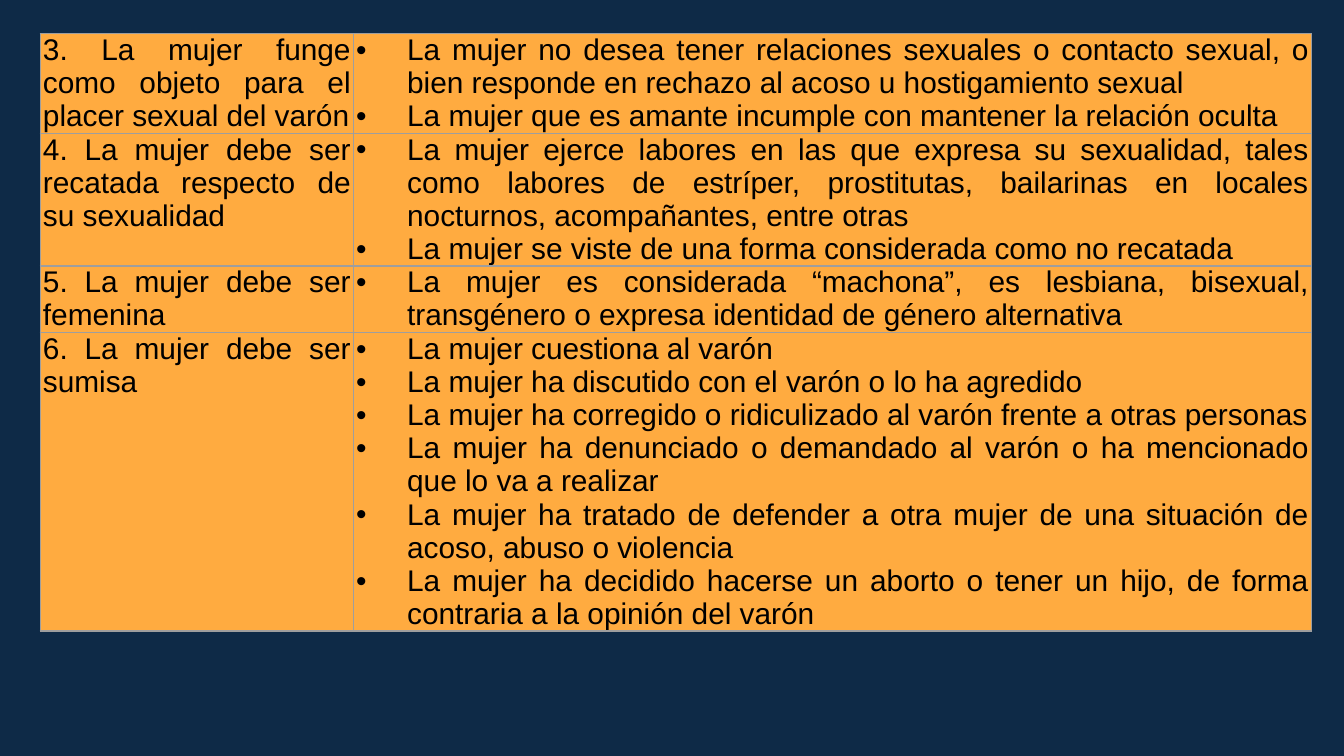
from lxml.etree import SubElement
from pptx import Presentation
from pptx.dml.color import RGBColor
from pptx.enum.text import PP_ALIGN
from pptx.oxml.ns import qn
from pptx.util import Inches, Pt

COLOURS = {"background": "0E2A47", "cell": "FFAB40", "text": "000000", "border": "9E9E9E"}

# Each row: height, stereotype, behaviours that break it
ROWS = [
    (0.5, "3. La mujer funge como objeto para el placer sexual del varón", [
        "La mujer no desea tener relaciones sexuales o contacto sexual, o bien responde "
        "en rechazo al acoso u hostigamiento sexual",
        "La mujer que es amante incumple con mantener la relación oculta",
    ]),
    (0.58, "4. La mujer debe ser recatada respecto de su sexualidad", [
        "La mujer ejerce labores en las que expresa su sexualidad, tales como labores de "
        "estríper, prostitutas, bailarinas en locales nocturnos, acompañantes, entre otras",
        "La mujer se viste de una forma considerada como no recatada",
    ]),
    (0.33, "5. La mujer debe ser femenina", [
        "La mujer es considerada “machona”, es lesbiana, bisexual, transgénero o expresa "
        "identidad de género alternativa",
    ]),
    (1.17, "6. La mujer debe ser sumisa", [
        "La mujer cuestiona al varón",
        "La mujer ha discutido con el varón o lo ha agredido",
        "La mujer ha corregido o ridiculizado al varón frente a otras personas",
        "La mujer ha denunciado o demandado al varón o ha mencionado que lo va a realizar",
        "La mujer ha tratado de defender a otra mujer de una situación de acoso, abuso o violencia",
        "La mujer ha decidido hacerse un aborto o tener un hijo, de forma contraria a la "
        "opinión del varón",
    ]),
]


class SlideBuilder:
    font = "Arial"
    size = Pt(16)
    indent = Inches(0.38)
    margin = Inches(0.02)

    def __init__(self, slide):
        self.slide = slide

    def colour(self, name):
        return RGBColor.from_string(COLOURS[name])

    def background(self):
        fill = self.slide.background.fill
        fill.solid()
        fill.fore_color.rgb = self.colour("background")

    def table(self, left, top, width, height, columns, rows):
        frame = self.slide.shapes.add_table(
            len(rows), len(columns), Inches(left), Inches(top), Inches(width), Inches(height))
        table = frame.table
        table.first_row = table.horz_banding = False
        for column, column_width in zip(table.columns, columns):
            column.width = Inches(column_width)
        for index, (row_height, stereotype, behaviours) in enumerate(rows):
            table.rows[index].height = Inches(row_height)
            self.cell(table.cell(index, 0), [stereotype])
            self.cell(table.cell(index, 1), behaviours, bulleted=True)
        frame.height = Inches(height)

    def cell(self, cell, texts, bulleted=False):
        cell.margin_left = cell.margin_right = self.margin
        cell.margin_top = cell.margin_bottom = 0
        self.borders(cell)
        cell.fill.solid()
        cell.fill.fore_color.rgb = self.colour("cell")
        frame = cell.text_frame
        for index, text in enumerate(texts):
            paragraph = frame.add_paragraph() if index else frame.paragraphs[0]
            paragraph.alignment = PP_ALIGN.JUSTIFY
            if bulleted:
                if index == len(texts) - 1:
                    paragraph.space_after = Pt(8)
                self.bullet(paragraph)
            run = paragraph.add_run()
            run.text = text
            run.font.name = self.font
            run.font.size = self.size
            run.font.color.rgb = self.colour("text")

    def bullet(self, paragraph):
        properties = paragraph._p.get_or_add_pPr()
        properties.set("marL", str(self.indent))
        properties.set("indent", str(-self.indent))
        colour = SubElement(properties, qn("a:buClr"))
        SubElement(colour, qn("a:srgbClr"), val=COLOURS["text"])
        SubElement(properties, qn("a:buFont"), typeface=self.font)
        SubElement(properties, qn("a:buChar"), char="•")

    def borders(self, cell):
        properties = cell._tc.get_or_add_tcPr()
        for side in ("lnL", "lnR", "lnT", "lnB"):
            line = SubElement(properties, qn(f"a:{side}"), w=str(Pt(0.75)))
            fill = SubElement(line, qn("a:solidFill"))
            SubElement(fill, qn("a:srgbClr"), val=COLOURS["border"])


def main():
    # Widescreen 16:9 slide
    presentation = Presentation()
    presentation.slide_width = Inches(10)
    presentation.slide_height = Inches(10) * 9 // 16
    builder = SlideBuilder(presentation.slides.add_slide(presentation.slide_layouts[6]))

    # Background
    builder.background()

    # Table of stereotypes
    builder.table(0.3, 0.25, 9.46, 5.07, (2.33, 7.13), ROWS)

    presentation.save("out.pptx")


if __name__ == "__main__":
    main()
